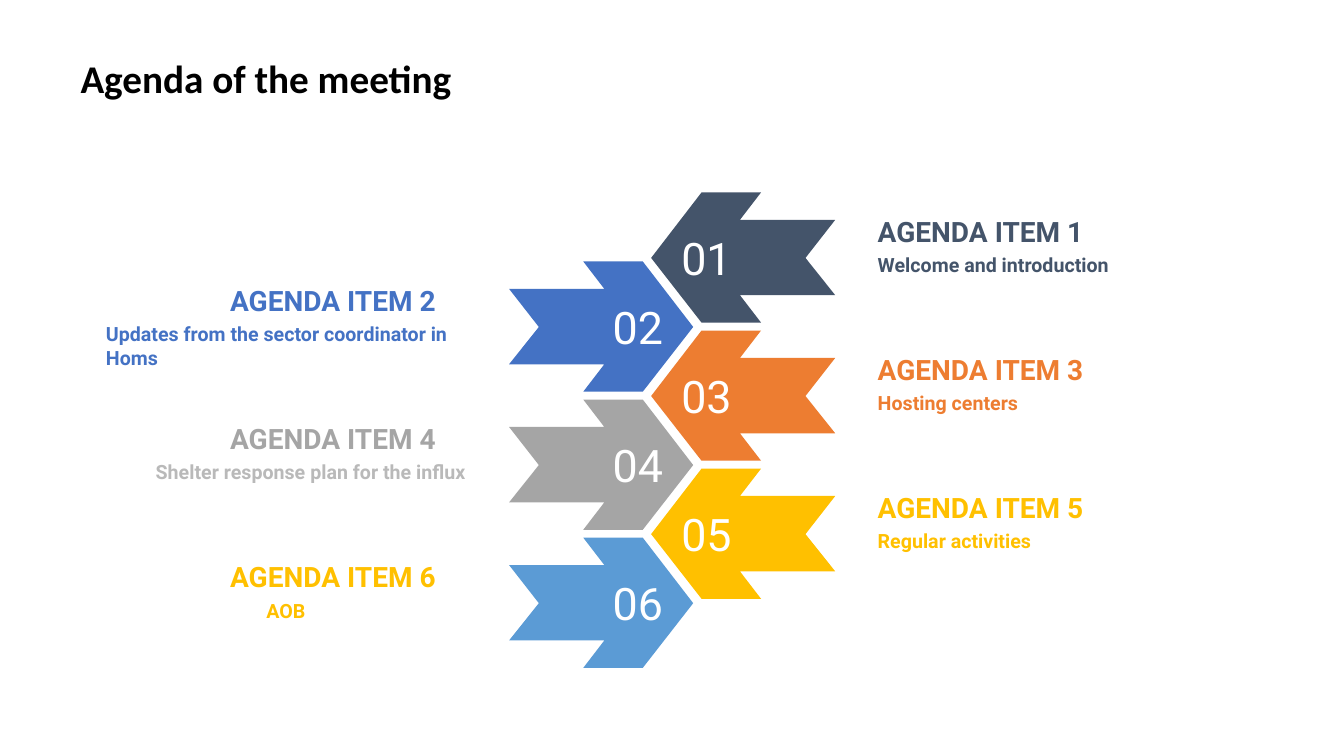
from pptx import Presentation
from pptx import util as u
from pptx.dml.color import RGBColor
from pptx.enum import text

BLACK = RGBColor(0x00, 0x00, 0x00)
WHITE = RGBColor(0xFF, 0xFF, 0xFF)
SLATE = RGBColor(0x44, 0x54, 0x6A)
BLUE = RGBColor(0x44, 0x72, 0xC4)
ORANGE = RGBColor(0xED, 0x7D, 0x31)
GRAY = RGBColor(0xA5, 0xA5, 0xA5)
LIGHT_GRAY = RGBColor(0xB9, 0xB9, 0xB9)
GOLD = RGBColor(0xFF, 0xC0, 0x00)
SKY = RGBColor(0x5B, 0x9B, 0xD5)

LEFT, CENTER, RIGHT = text.PP_ALIGN.LEFT, text.PP_ALIGN.CENTER, text.PP_ALIGN.RIGHT
TOP, MIDDLE = text.MSO_ANCHOR.TOP, text.MSO_ANCHOR.MIDDLE

AGENDA = [
    ("Welcome and introduction", SLATE, SLATE, SLATE, LEFT),
    ("Updates from the sector coordinator in Homs", BLUE, BLUE, BLUE, LEFT),
    ("Hosting centers", ORANGE, ORANGE, ORANGE, LEFT),
    ("Shelter response plan for the influx", GRAY, GRAY, LIGHT_GRAY, RIGHT),
    ("Regular activities", GOLD, GOLD, GOLD, LEFT),
    ("AOB", SKY, GOLD, GOLD, CENTER),
]

FIRST_TOP, STEP = 4.85, 1.74
ARROW_WIDTH = 4.64
ARROW_OUTLINE = [
    (1.27, 0), (0, 1.65), (1.27, 3.28), (2.77, 3.28), (2.24, 2.59),
    (4.64, 2.59), (3.89, 1.65), (4.64, 0.69), (2.24, 0.69), (2.77, 0),
]


class AgendaSlide:
    """Draws the agenda elements on one slide, with lengths in centimetres."""

    def __init__(self, deck):
        self.page = deck.slides.add_slide(deck.slide_layouts[5])
        self.font = "Roboto"

    def add_words(self, frame, words, size, color, bold, align, font=None):
        """Add one formatted run to the first paragraph of a frame."""
        para = frame.paragraphs[0]
        para.alignment = align
        span = para.add_run()
        span.text = words
        span.font.name = font or self.font
        span.font.size = u.Pt(size)
        span.font.bold = bold
        span.font.color.rgb = color
        return para

    def title(self, words):
        """Place and format the title placeholder."""
        box = self.page.shapes.title
        box.left, box.top, box.width, box.height = map(u.Cm, (1.7, 1.09, 30.43, 1.88))
        frame = box.text_frame
        frame.auto_size = text.MSO_AUTO_SIZE.NONE
        frame.vertical_anchor = MIDDLE
        frame.margin_left = frame.margin_right = u.Cm(0.33)
        frame.margin_top = frame.margin_bottom = u.Cm(0.18)
        para = self.add_words(frame, words, 28, BLACK, True, LEFT, "Calibri")
        para.line_spacing = 0.9
        para.space_before = u.Pt(10)

    def label(self, place, words, size, color, bold=True, align=LEFT, anchor=MIDDLE):
        """Add a text box without margins."""
        box = self.page.shapes.add_textbox(*map(u.Cm, place))
        frame = box.text_frame
        frame.word_wrap = True
        frame.vertical_anchor = anchor
        frame.margin_left = frame.margin_right = 0
        frame.margin_top = frame.margin_bottom = 0
        self.add_words(frame, words, size, color, bold, align)

    def arrow(self, left, top, color, points_right):
        """Draw a notched arrow, mirrored when it points right."""
        corners = [
            (u.Cm(left + (ARROW_WIDTH - x if points_right else x)), u.Cm(top + y))
            for x, y in ARROW_OUTLINE
        ]
        builder = self.page.shapes.build_freeform(*corners[0])
        builder.add_line_segments(corners[1:], close=True)
        shape = builder.convert_to_shape()
        shape.shadow.inherit = False
        shape.fill.solid()
        shape.fill.fore_color.rgb = color
        shape.line.fill.background()

    def item(self, index, detail, arrow_color, heading_color, detail_color, align):
        """Draw one agenda item with its arrow, number, heading and detail."""
        top = FIRST_TOP + STEP * index
        number = index + 1
        on_left = index % 2 == 1
        if on_left:
            arrow_left, number_left, heading_left, detail_left = 12.83, 15.34, 5.8, 2.67
        else:
            arrow_left, number_left, heading_left, detail_left = 16.41, 17.07, 22.12, 22.12
        self.arrow(arrow_left, top, arrow_color, on_left)
        self.label((number_left, top + 0.99, 1.47, 1.3), f"{number:02}", 32, WHITE,
                   bold=False, align=CENTER)
        self.label((detail_left, top + 1.53, 9.07, 0.6), detail, 14, detail_color,
                   align=align, anchor=TOP)
        self.label((heading_left, top + 0.55, 5.94, 0.86), f"AGENDA ITEM {number}", 20,
                   heading_color)


def main():
    """Build and save the agenda."""
    deck = Presentation()
    deck.slide_width, deck.slide_height = u.Cm(33.87), u.Cm(19.05)
    slide = AgendaSlide(deck)
    slide.title("Agenda of the meeting")
    for index, entry in enumerate(AGENDA):
        slide.item(index, *entry)
    deck.save("out.pptx")


if __name__ == "__main__":
    main()
